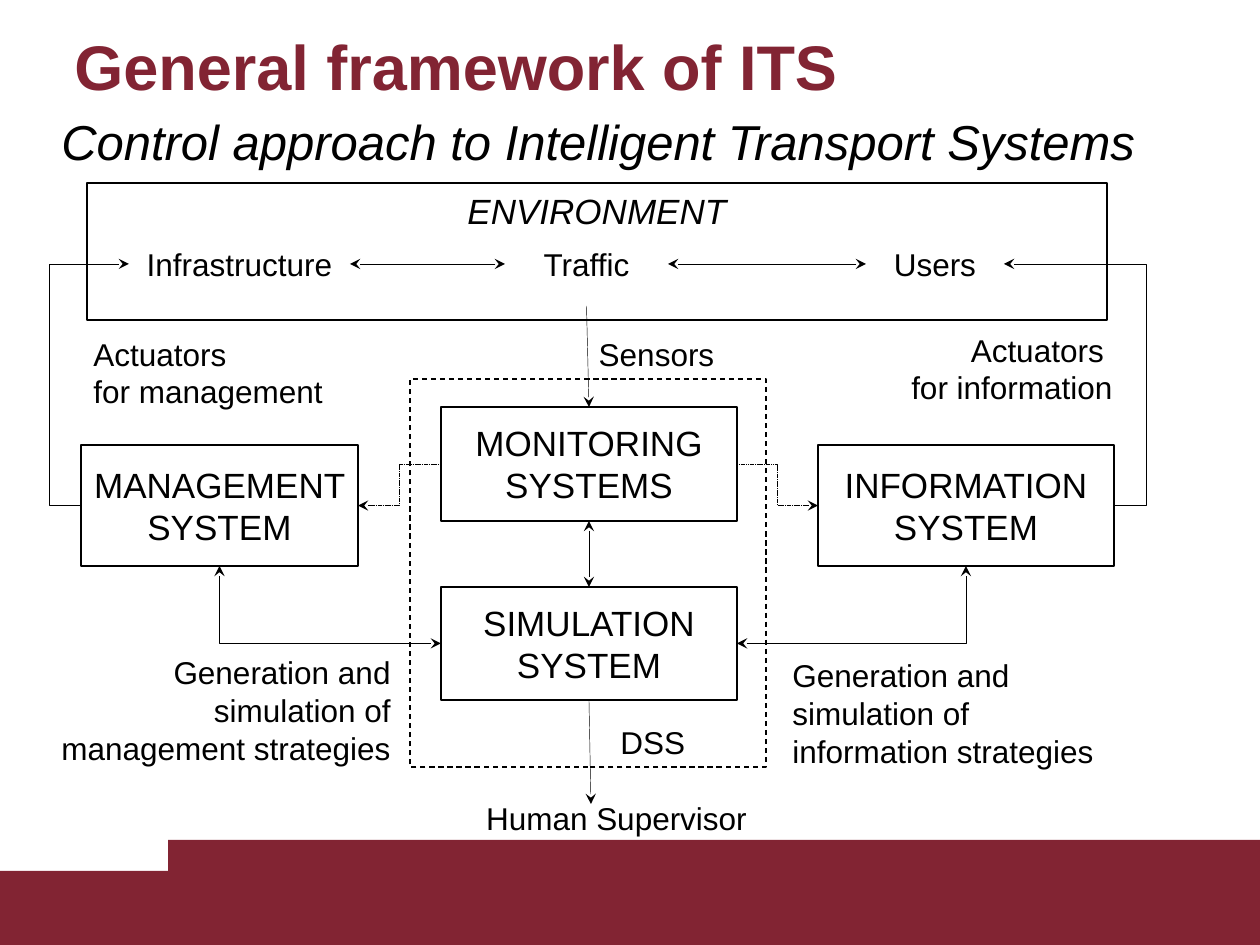
from lxml import etree
from pptx import Presentation
from pptx.dml.color import RGBColor
from pptx.enum.dml import MSO_LINE
from pptx.enum.shapes import MSO_CONNECTOR, MSO_SHAPE
from pptx.enum.text import MSO_ANCHOR, PP_ALIGN
from pptx.oxml.ns import qn
from pptx.util import Pt

PX = 914400 / 126
BLACK = RGBColor(0, 0, 0)
WINE = RGBColor(0x82, 0x24, 0x33)
RECT = MSO_SHAPE.RECTANGLE
STRAIGHT, ELBOW = MSO_CONNECTOR.STRAIGHT, MSO_CONNECTOR.ELBOW
DASH, DOTS = MSO_LINE.DASH, MSO_LINE.SQUARE_DOT
TOP, MID, LOW = MSO_ANCHOR.TOP, MSO_ANCHOR.MIDDLE, MSO_ANCHOR.BOTTOM
LEFT, MIDST, RIGHT = PP_ALIGN.LEFT, PP_ALIGN.CENTER, PP_ALIGN.RIGHT
UP, WEST, DOWN, EAST = range(4)

BARS = [(0, 871, 1260, 74), (168, 840, 1092, 105)]

BOXES = [
    ("env", "ENVIRONMENT", (87, 183, 1020, 137), TOP),
    ("mon", "MONITORING SYSTEMS", (441, 407, 296, 114), MID),
    ("man", "MANAGEMENT SYSTEM", (81, 445, 277, 121), MID),
    ("info", "INFORMATION SYSTEM", (818, 445, 296, 121), MID),
    ("sim", "SIMULATION SYSTEM", (441, 587, 296, 113), MID),
]

LABELS = [
    ("users", "Users", (866, 222, 138, 84), MIDST),
    ("infra", "Infrastructure", (129, 222, 221, 84), MIDST),
    ("traffic", "Traffic", (505, 222, 163, 84), MIDST),
    ("right", "Generation and simulation of information strategies",
     (780, 671, 343, 84), LEFT),
    ("left", "Generation and simulation of management strategies",
     (33, 668, 370, 84), RIGHT),
    ("sensors", "Sensors", (583, 323, 147, 61), MIDST),
    ("tell", "Actuators \vfor information", (886, 338, 239, 61), RIGHT),
    ("act", "Actuators\nfor management", (81, 342, 277, 61), LEFT),
    ("human", "Human Supervisor", (469, 787, 295, 61), MIDST),
]

# start, side, end, side, preset, bend, both heads, dash
LINKS = [
    ("info", EAST, "users", EAST, "bentConnector3", -29000, False, None),
    ("man", WEST, "infra", WEST, "bentConnector3", -66200, False, None),
    ("users", WEST, "traffic", EAST, "line", None, True, None),
    ("traffic", WEST, "infra", EAST, "line", None, True, None),
    ("sim", EAST, "info", DOWN, "bentConnector2", None, True, None),
    ("sim", WEST, "man", DOWN, "bentConnector2", None, True, None),
    ("mon", WEST, "man", EAST, "bentConnector3", 50000, False, DOTS),
    ("mon", EAST, "info", WEST, "bentConnector3", 50000, False, DOTS),
    ("traffic", DOWN, "mon", UP, "line", None, False, None),
    ("mon", DOWN, "sim", UP, "line", None, True, None),
]


def px(n):
    return int(n * PX)


def write(shape, text, size, align, anchor, color=BLACK, bold=False, italic=False):
    frame = shape.text_frame
    frame.word_wrap = True
    frame.vertical_anchor = anchor
    frame.text = text
    for para in frame.paragraphs:
        para.alignment = align
        for run in para.runs:
            font = run.font
            font.name, font.size = "Arial", Pt(size)
            font.bold, font.italic = bold, italic
            font.color.rgb = color


def draw_box(slide, area, fill=None, dash=None):
    box = slide.shapes.add_shape(RECT, *map(px, area))
    box.shadow.inherit = False
    if fill:
        box.fill.solid()
        box.fill.fore_color.rgb = fill
        box.line.fill.background()
    else:
        box.fill.background()
        box.line.color.rgb = BLACK
        box.line.width = Pt(0.75)
        if dash:
            box.line.dash_style = dash
    return box


def draw_text(slide, area, *style, **more):
    box = slide.shapes.add_textbox(*map(px, area))
    write(box, *style, **more)
    return box


def draw_link(slide, kind, ends, both=False, dash=None):
    link = slide.shapes.add_connector(kind, *map(px, ends))
    link.line.color.rgb = BLACK
    link.line.width = Pt(0.25)
    if dash:
        link.line.dash_style = dash
    props = link._element.spPr
    line = props.find(qn("a:ln"))
    for tag in ["a:headEnd", "a:tailEnd"] if both else ["a:tailEnd"]:
        etree.SubElement(line, qn(tag), type="stealth")
    etree.SubElement(props, qn("a:effectLst"))
    return link


def bend(link, preset, value):
    geom = link._element.spPr.find(qn("a:prstGeom"))
    geom.set("prst", preset)
    if value is not None:
        guides = geom.find(qn("a:avLst"))
        if guides is None:
            guides = etree.SubElement(geom, qn("a:avLst"))
        etree.SubElement(guides, qn("a:gd"), name="adj1", fmla=f"val {value}")


def main():
    deck = Presentation()
    deck.slide_width, deck.slide_height = px(1260), px(945)
    slide = deck.slides.add_slide(deck.slide_layouts[6])

    for area in BARS:
        draw_box(slide, area, fill=WINE)

    nodes = {}
    for name, text, area, anchor in BOXES:
        nodes[name] = draw_box(slide, area)
        write(nodes[name], text, 20, MIDST, anchor, italic=name == "env")
    for name, text, area, align in LABELS:
        nodes[name] = draw_text(slide, area, text, 18, align, MID)

    for start, out, end, into, preset, value, both, dash in LINKS:
        kind = STRAIGHT if preset == "line" else ELBOW
        link = draw_link(slide, kind, (0, 0, 0, 0), both, dash)
        link.begin_connect(nodes[start], out)
        link.end_connect(nodes[end], into)
        if kind == ELBOW:
            bend(link, preset, value)
    last = draw_link(slide, STRAIGHT, (589, 700, 591, 804))
    last.begin_connect(nodes["sim"], DOWN)

    dss = draw_box(slide, (410, 379, 356, 388), dash=DASH)
    write(dss, "DSS", 18, MIDST, LOW)
    dss.text_frame.margin_left = px(142)

    draw_text(slide, (62, 21, 1115, 69), "General framework of ITS",
              36, LEFT, TOP, color=WINE, bold=True)
    draw_text(slide, (49, 105, 1119, 72),
              "Control approach to Intelligent Transport Systems",
              28, LEFT, TOP, italic=True)
    deck.save("out.pptx")


if __name__ == "__main__":
    main()
